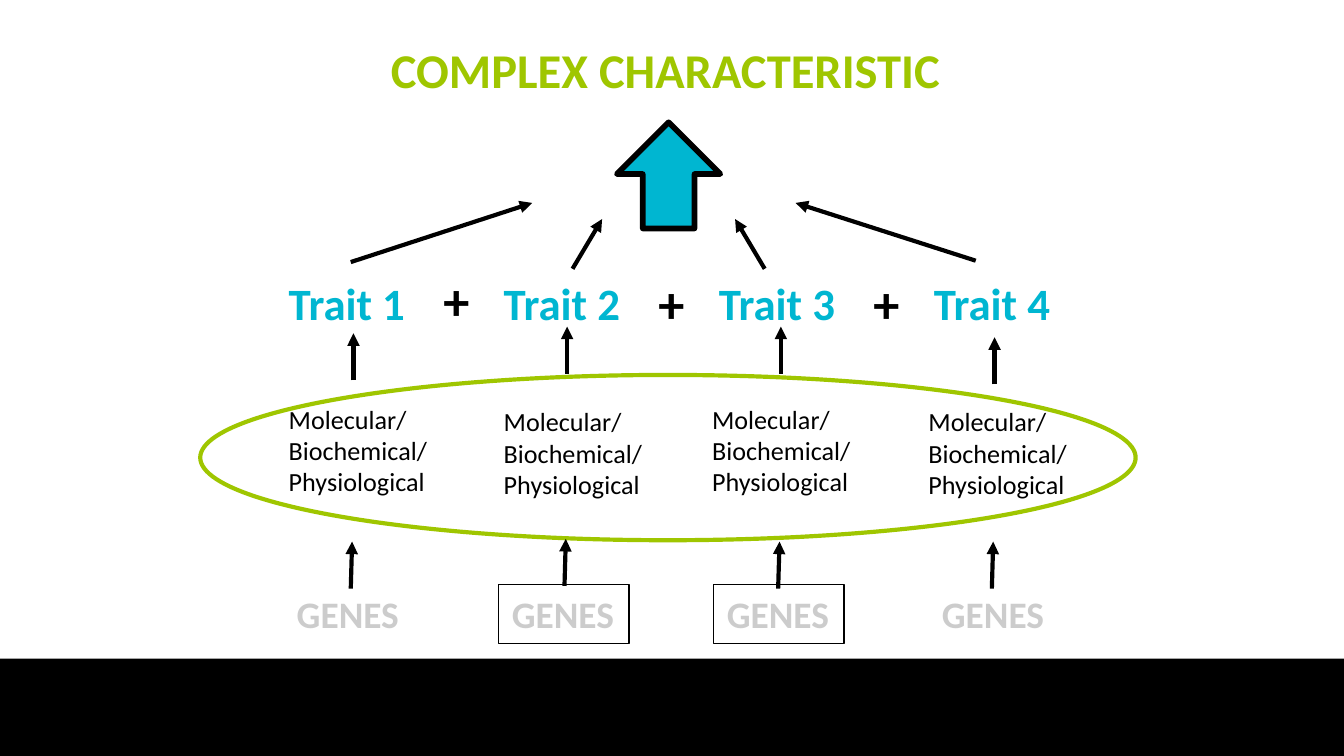
from dataclasses import dataclass

from lxml.etree import SubElement
from pptx import Presentation
from pptx.dml.color import RGBColor
from pptx.enum.shapes import MSO_CONNECTOR, MSO_SHAPE
from pptx.enum.text import MSO_AUTO_SIZE
from pptx.oxml.ns import qn
from pptx.util import Inches, Pt


@dataclass(frozen=True)
class Theme:
    font: str = "Calibri"
    black: RGBColor = RGBColor(0, 0, 0)
    green: RGBColor = RGBColor(0x9F, 0xC6, 0x00)
    cyan: RGBColor = RGBColor(0x00, 0xB6, 0xD1)
    grey: RGBColor = RGBColor(0xCC, 0xCC, 0xCC)
    title_size: int = 26
    plus_size: int = 28
    trait_size: int = 24
    genes_size: int = 20
    body_size: int = 14
    thin_line: float = 0.75
    line: float = 2.25
    thick_line: float = 3


THEME = Theme()
COLUMN_STEP = 1.6
ARROW_STEP = 1.59
MECHANISM = "Molecular/\nBiochemical/\nPhysiological"


def add_label(slide, box, text, size, color, bold=True, wrap=False):
    shape = slide.shapes.add_textbox(*map(Inches, box))
    frame = shape.text_frame
    frame.text = text
    frame.word_wrap = wrap
    frame.auto_size = MSO_AUTO_SIZE.SHAPE_TO_FIT_TEXT
    for paragraph in frame.paragraphs:
        for run in paragraph.runs:
            run.font.name = THEME.font
            run.font.size = Pt(size)
            run.font.bold = bold
            run.font.color.rgb = color
    return shape


def add_preset(slide, kind, box, fill=None, line=None, width=0):
    shape = slide.shapes.add_shape(kind, *map(Inches, box))
    shape.shadow.inherit = False
    if fill is None:
        shape.fill.background()
    else:
        shape.fill.solid()
        shape.fill.fore_color.rgb = fill
    if line is None:
        shape.line.fill.background()
    else:
        shape.line.color.rgb = line
        shape.line.width = Pt(width)
    return shape


def add_arrow(slide, start, end):
    arrow = slide.shapes.add_connector(
        MSO_CONNECTOR.STRAIGHT, *map(Inches, (*start, *end)))
    arrow.line.color.rgb = THEME.black
    arrow.line.width = Pt(THEME.line)
    SubElement(arrow.line._get_or_add_ln(), qn("a:tailEnd"), type="triangle")
    SubElement(arrow._element.spPr, qn("a:effectLst"))


def add_upward_arrows(slide, left, top, drops, lean=0.0):
    """Draw one short arrow per column, each lowered by its own drop."""
    for column, drop in enumerate(drops):
        x = left + column * ARROW_STEP
        tip = top + drop
        add_arrow(slide, (x, tip + 0.35), (x + lean, tip))


def add_outcome(slide, left, top, width, height):
    add_label(slide, (left, top, width, 0.54), "COMPLEX CHARACTERISTIC",
              THEME.title_size, THEME.green)
    arrow = add_preset(slide, MSO_SHAPE.DOWN_ARROW,
                       (left + 1.78, top + 0.66, 0.77, height - 0.66),
                       THEME.cyan, THEME.black, THEME.thick_line)
    arrow.rotation = 180


def add_converging_arrows(slide, left, top):
    for start, end in (((0, 0.44), (1.35, 0)), ((1.65, 0.49), (1.87, 0.12)),
                       ((3.08, 0.49), (2.86, 0.12)), ((4.65, 0.43), (3.31, 0))):
        add_arrow(slide, (left + start[0], top + start[1]),
                  (left + end[0], top + end[1]))


def add_traits(slide, left, top):
    for column in range(4):
        add_label(slide, (left + column * COLUMN_STEP, top, 1.1, 0.5),
                  f"Trait {column + 1}", THEME.trait_size, THEME.cyan)
    for gap, offset in enumerate((-0.05, -0.03, -0.03)):
        add_label(slide, (left + 1.15 + gap * COLUMN_STEP, top + offset, 0.4, 0.57),
                  "+", THEME.plus_size, THEME.black)


def add_mechanisms(slide, left, top, width, height):
    add_preset(slide, MSO_SHAPE.OVAL, (left, top, width, height),
               line=THEME.green, width=THEME.line)
    for x, y in ((0.56, 0.16), (2.16, 0.18), (3.71, 0.16), (5.32, 0.18)):
        add_label(slide, (left + x, top + y, 1.3, 0.81), MECHANISM,
                  THEME.body_size, THEME.black, bold=False, wrap=True)


def add_genes(slide, left, top):
    for column, framed in enumerate((False, True, True, False)):
        label = add_label(slide, (left + column * COLUMN_STEP, top, 0.97, 0.44),
                          "GENES", THEME.genes_size, THEME.grey)
        if framed:
            label.line.color.rgb = THEME.black
            label.line.width = Pt(THEME.thin_line)


def build_slide(presentation):
    slide = presentation.slides.add_slide(presentation.slide_layouts[6])
    add_preset(slide, MSO_SHAPE.RECTANGLE, (0, 4.9, 10, 0.75), THEME.black)
    add_outcome(slide, 2.81, 0.25, 4.33, 1.45)
    add_mechanisms(slide, 1.49, 2.79, 6.96, 1.23)
    add_converging_arrows(slide, 2.61, 1.51)
    add_genes(slide, 2.11, 4.35)
    add_traits(slide, 2.05, 2)
    add_upward_arrows(slide, 2.63, 2.43, (0.05, 0, 0, 0.08))
    add_upward_arrows(slide, 2.61, 4.02, (0.01, -0.01, 0.01, 0.01), lean=0.01)


def main():
    presentation = Presentation()
    presentation.slide_width = Inches(10)
    presentation.slide_height = presentation.slide_width * 9 // 16
    build_slide(presentation)
    presentation.save("out.pptx")


if __name__ == "__main__":
    main()
